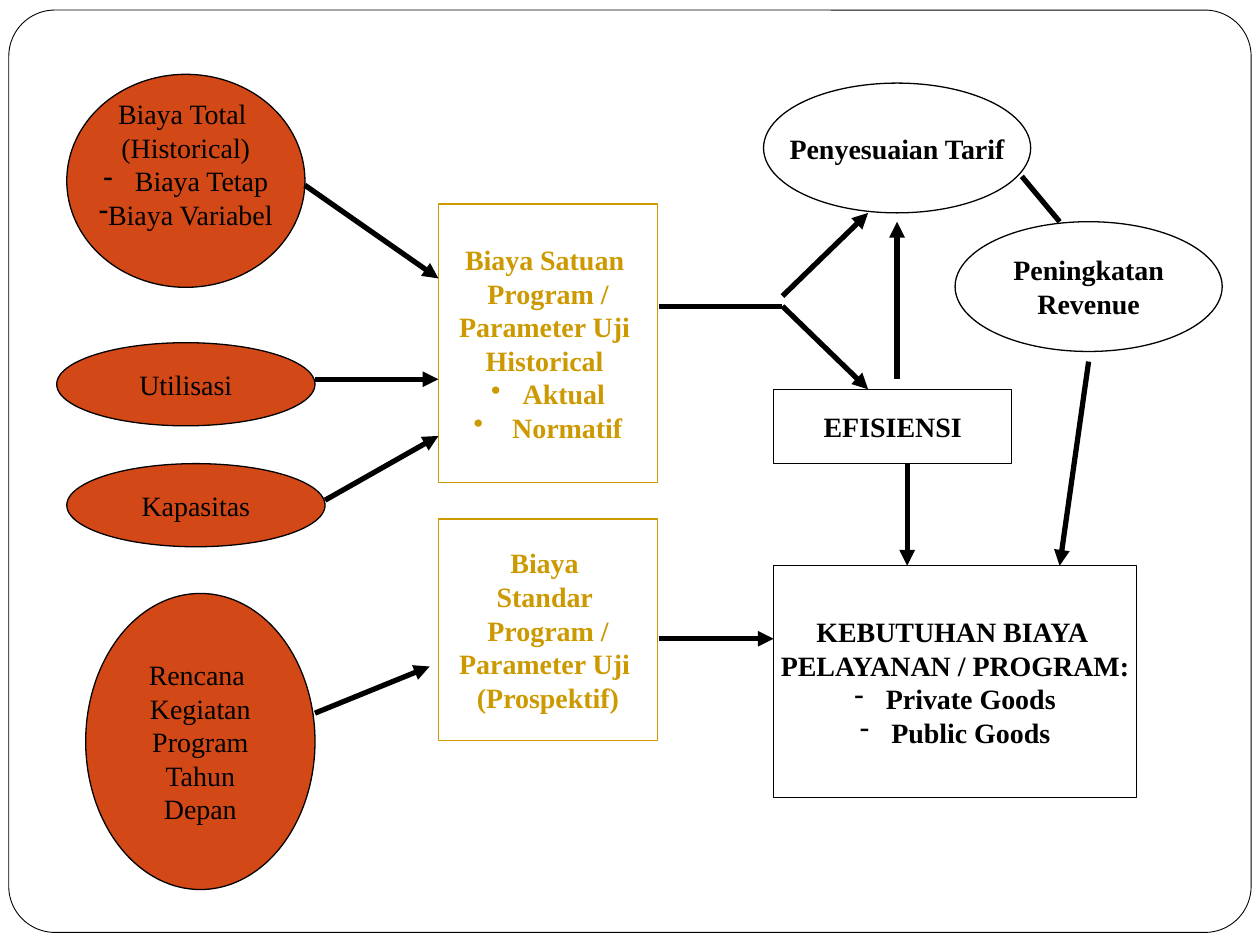
import dataclasses

import pptx
import pptx.dml.color
import pptx.enum.shapes
import pptx.enum.text
import pptx.oxml
import pptx.oxml.ns
import pptx.util
from pptx.util import Inches

SHAPES = pptx.enum.shapes.MSO_SHAPE


@dataclasses.dataclass(frozen=True)
class Theme:
    """Colours, font and sizes shared by the whole diagram."""
    black: str = "000000"
    white: str = "FFFFFF"
    orange: str = "D34817"
    gold: str = "CC9900"
    font: str = "Times New Roman"
    text_size: float = 16
    frame_line: float = 0.5
    outline: float = 0.75
    arrow_line: float = 3


THEME = Theme()


def color(value):
    """Return the colour object for a hex value."""
    return pptx.dml.color.RGBColor.from_string(value)


def add_child(parent, tag, **attributes):
    """Append a DrawingML element to a parent and return it."""
    child = pptx.oxml.parse_xml(f"<a:{tag} {pptx.oxml.ns.nsdecls('a')}/>")
    for name, value in attributes.items():
        child.set(name, str(value))
    parent.append(child)
    return child


def add_bullet(para, mark, indent):
    """Give a paragraph a bullet mark with a hanging indent."""
    properties = para._p.get_or_add_pPr()
    properties.set("marL", str(Inches(indent)))
    properties.set("indent", str(-Inches(indent)))
    add_child(properties, "buFontTx")
    add_child(properties, "buChar", char=mark)


def write_text(box, lines, ink=THEME.black, bold=False, mark=None, indents=(), bottom=0.04):
    """Write centred lines in a box, the last ones bulleted with the given indents."""
    frame = box.text_frame
    frame.word_wrap = False
    frame.vertical_anchor = pptx.enum.text.MSO_ANCHOR.MIDDLE
    frame.margin_left = frame.margin_right = Inches(0.09)
    frame.margin_top, frame.margin_bottom = Inches(0.04), Inches(bottom)
    first_bullet = len(lines) - len(indents)
    for index, line in enumerate(lines):
        para = frame.paragraphs[0] if index == 0 else frame.add_paragraph()
        para.alignment = pptx.enum.text.PP_ALIGN.CENTER
        if index >= first_bullet:
            add_bullet(para, mark, indents[index - first_bullet])
        span = para.add_run()
        span.text = line
        span.font.name = THEME.font
        span.font.size = pptx.util.Pt(THEME.text_size)
        span.font.bold = bold
        span.font.color.rgb = color(ink)


def add_box(page, kind, place, fill=None, line=THEME.black, width=THEME.outline):
    """Add an outlined shape at left, top, width, height in inches."""
    box = page.shapes.add_shape(kind, *map(Inches, place))
    box.shadow.inherit = False
    if fill:
        box.fill.solid()
        box.fill.fore_color.rgb = color(fill)
    else:
        box.fill.background()
    box.line.color.rgb = color(line)
    box.line.width = pptx.util.Pt(width)
    return box


def add_frame(page):
    """Add the rounded frame around the slide."""
    frame = add_box(page, SHAPES.ROUNDED_RECTANGLE, (0.07, 0.08, 9.86, 7.32),
                    fill=THEME.white, width=THEME.frame_line)
    frame.adjustments[0] = 0.05


def add_input(page, place, lines, **text_format):
    """Add an orange input ellipse."""
    write_text(add_box(page, SHAPES.OVAL, place, fill=THEME.orange), lines, **text_format)


def add_cost(page, place, lines, **text_format):
    """Add a gold unit cost box."""
    box = add_box(page, SHAPES.RECTANGLE, place, line=THEME.gold)
    write_text(box, lines, ink=THEME.gold, bold=True, **text_format)


def add_result(page, kind, place, lines, **text_format):
    """Add a black outlined result shape."""
    write_text(add_box(page, kind, place), lines, bold=True, **text_format)


def add_link(page, start, end, head=True):
    """Add a thick straight line, with an arrowhead at its end by default."""
    link = page.shapes.add_connector(pptx.enum.shapes.MSO_CONNECTOR.STRAIGHT,
                                     *map(Inches, start + end))
    link.line.color.rgb = color(THEME.black)
    link.line.width = pptx.util.Pt(THEME.arrow_line)
    if head:
        add_child(link.line._get_or_add_ln(), "tailEnd", type="triangle")
    add_child(link._element.spPr, "effectLst")


def main():
    """Build the cost diagram and save it."""
    deck = pptx.Presentation()
    deck.slide_width, deck.slide_height = Inches(10), Inches(7.5)
    page = deck.slides.add_slide(deck.slide_layouts[6])
    add_frame(page)

    add_input(page, (0.53, 0.59, 1.89, 1.69),
              ["Biaya Total ", "(Historical)", "Biaya Tetap", "Biaya Variabel"],
              mark="-", indents=(0.25, 0), bottom=0.31)
    add_input(page, (0.45, 2.72, 2.05, 0.66), ["Utilisasi"])
    add_input(page, (0.53, 3.68, 2.05, 0.66), ["Kapasitas"])
    add_input(page, (0.68, 4.71, 1.82, 2.35),
              ["Rencana ", "Kegiatan", "Program", "Tahun", "Depan"])

    add_cost(page, (3.48, 1.62, 1.74, 2.21),
             ["Biaya Satuan ", "Program /", "Parameter Uji ", "Historical ",
              "Aktual", " Normatif"], mark="•", indents=(0.25, 0.25))
    add_cost(page, (3.48, 4.12, 1.74, 1.76),
             ["Biaya ", "Standar ", "Program /", "Parameter Uji ", "(Prospektif)"])

    add_result(page, SHAPES.OVAL, (6.06, 0.66, 2.12, 1.03), ["Penyesuaian Tarif"])
    add_result(page, SHAPES.OVAL, (7.58, 1.76, 2.12, 1.03), ["Peningkatan", "Revenue"])
    add_result(page, SHAPES.RECTANGLE, (6.14, 3.09, 1.89, 0.59), ["EFISIENSI"])
    add_result(page, SHAPES.RECTANGLE, (6.14, 4.49, 2.88, 1.84),
               ["KEBUTUHAN BIAYA ", "PELAYANAN / PROGRAM:", "Private Goods", "Public Goods"],
               mark="-", indents=(0.25, 0.25))

    arrows = [
        ((2.42, 1.47), (3.48, 2.21)),
        ((2.5, 3.01), (3.48, 3.01)),
        ((2.58, 3.97), (3.48, 3.46)),
        ((2.5, 5.66), (3.41, 5.29)),
        ((5.23, 5.07), (6.14, 5.07)),
        ((6.21, 2.43), (6.89, 3.09)),
        ((6.21, 2.35), (6.89, 1.69)),
        ((7.12, 3.01), (7.12, 1.76)),
        ((7.2, 3.68), (7.2, 4.49)),
        ((8.64, 2.87), (8.41, 4.49)),
    ]
    for start, end in arrows:
        add_link(page, start, end)
    add_link(page, (5.23, 2.43), (6.21, 2.43), head=False)
    add_link(page, (8.11, 1.4), (8.41, 1.76), head=False)
    deck.save("out.pptx")


if __name__ == "__main__":
    main()
